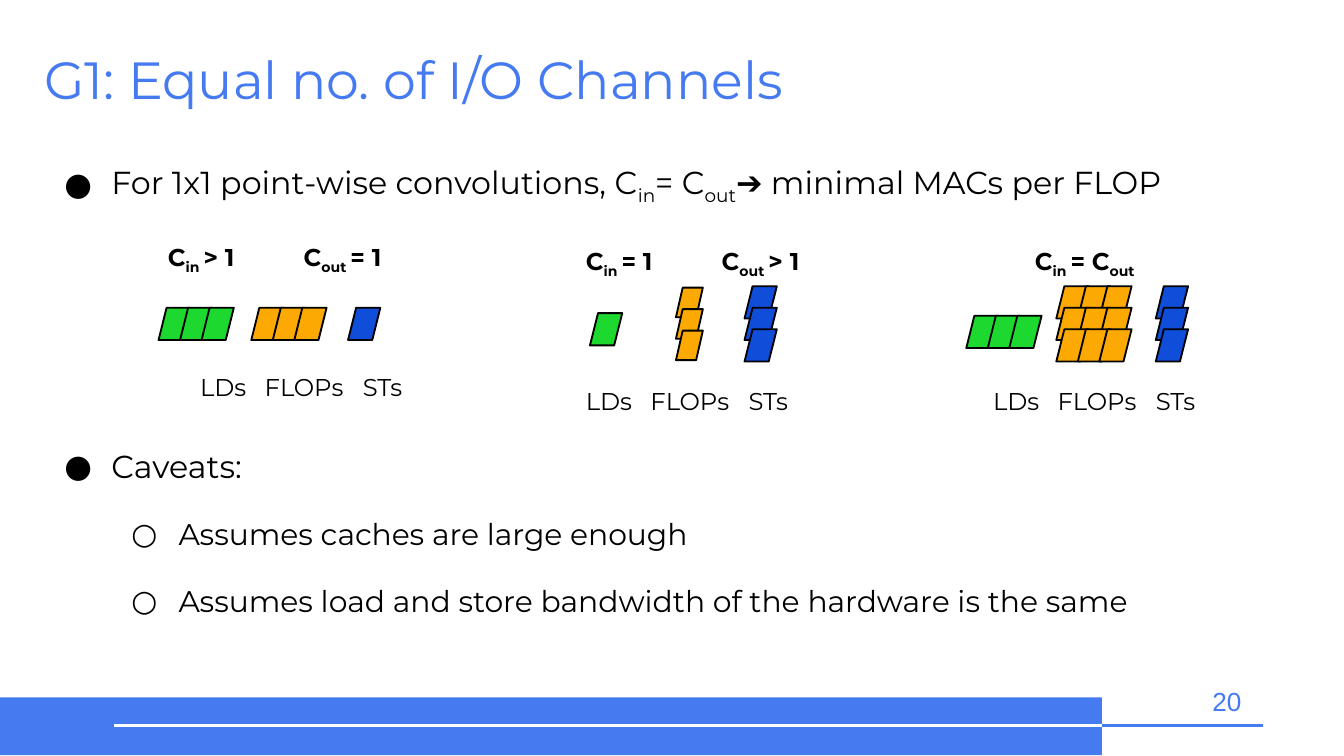
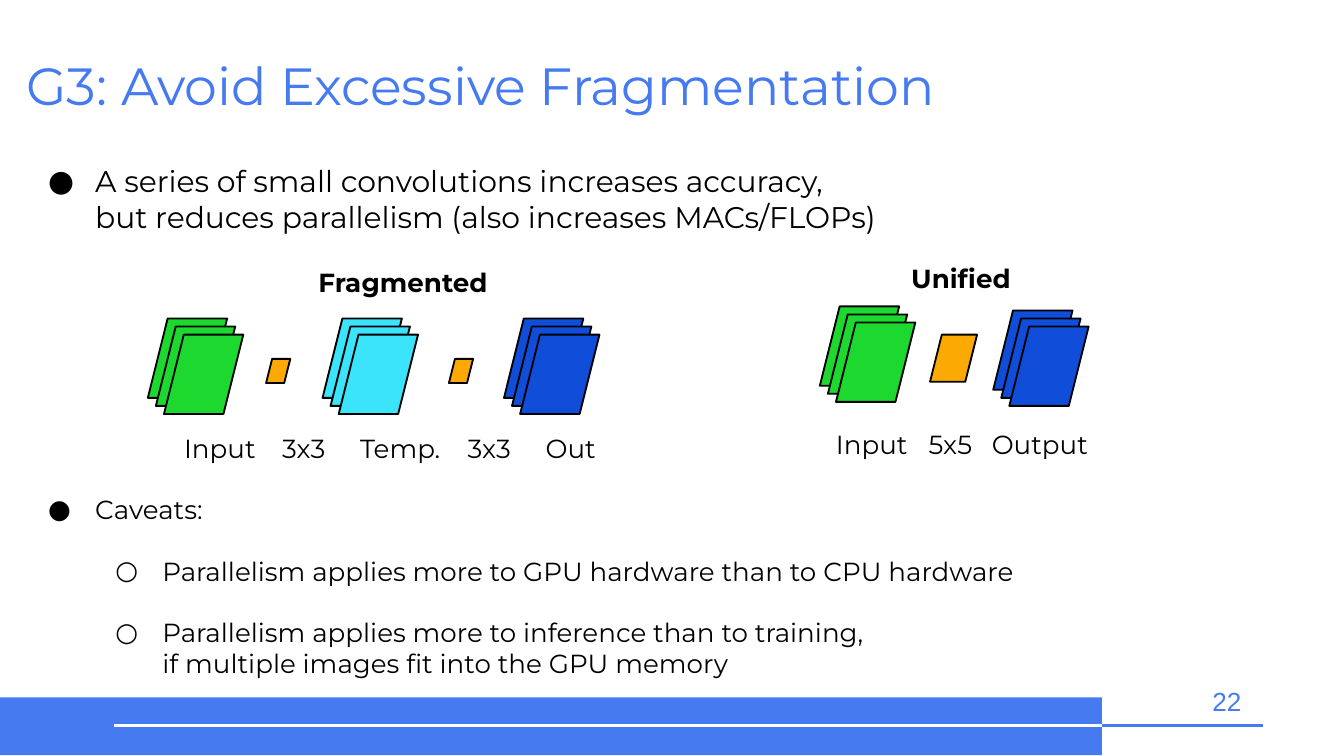
from itertools import product

from lxml import etree
from pptx import Presentation
from pptx.dml.color import RGBColor
from pptx.enum.shapes import MSO_CONNECTOR as CONN, MSO_SHAPE as SHAPE
from pptx.oxml.ns import qn
from pptx.util import Pt

PX = 9144  # 100 px to the inch
BLUE = RGBColor(0x46, 0x7A, 0xF1)
WHITE = RGBColor(0xFF, 0xFF, 0xFF)
BLACK = RGBColor(0x00, 0x00, 0x00)
GREEN = RGBColor(0x1D, 0xD9, 0x2F)
ORANGE = RGBColor(0xFC, 0xA9, 0x04)
NAVY = RGBColor(0x10, 0x4D, 0xD9)
CYAN = RGBColor(0x3B, 0xE4, 0xFB)


def add_text(s, text, box=None, tf=None, size=14, color=BLACK, font="Montserrat",
             bold=False, inset=0, level=None, before=0, spacing=1.0):
    """Add a paragraph in a new box, or to tf; |...| marks subscripts."""
    if tf is None:
        tf = s.shapes.add_textbox(*(v * PX for v in box)).text_frame
        tf.word_wrap = True
        tf.margin_left = tf.margin_right = tf.margin_top = tf.margin_bottom = inset * PX
        p = tf.paragraphs[0]
    else:
        p = tf.add_paragraph()
    p.space_before = Pt(before)
    p.line_spacing = spacing
    if level is not None:
        p.level = level
        pPr = p._p.get_or_add_pPr()
        pPr.set("marL", str((50 + 50 * level) * PX))
        pPr.set("indent", str(-35 * PX))
        clr = etree.SubElement(pPr, qn("a:buClr"))
        etree.SubElement(clr, qn("a:srgbClr")).set("val", str(BLACK))
        etree.SubElement(pPr, qn("a:buFont")).set("typeface", font)
        etree.SubElement(pPr, qn("a:buChar")).set("char", "●○"[level])
    for n, line in enumerate(text.split("\n")):
        if n:
            p.add_line_break()
        for i, part in enumerate(line.split("|")):
            if not part:
                continue
            r = p.add_run()
            r.text = part
            r.font.size, r.font.name, r.font.bold = Pt(size), font, bold
            r.font.color.rgb = color
            if i % 2:
                r.font._element.set("baseline", "-25000")
    return tf


def add_block(s, kind, color, x, y, w, h, outline=True):
    sp = s.shapes.add_shape(kind, x * PX, y * PX, w * PX, h * PX)
    sp.shadow.inherit = False
    sp.fill.solid()
    sp.fill.fore_color.rgb = color
    if outline:
        sp.line.color.rgb = BLACK
        sp.line.width = Pt(1)
    else:
        sp.line.fill.background()


prs = Presentation()
prs.slide_width = 1000 * PX
prs.slide_height = prs.slide_width * 9 // 16

# Shared frame: footer band, rules, page number, title
slides = []
for title, x, y, number in [
    ("G1: Equal no. of I/O Channels", 23, 25, "20"),
    ("G3: Avoid Excessive Fragmentation", 10, 30, "22"),
]:
    s = prs.slides.add_slide(prs.slide_layouts[6])
    add_block(s, SHAPE.RECTANGLE, BLUE, 0, 519, 820, 43, outline=False)
    for color, x1, x2 in [(WHITE, 826, 85), (BLUE, 940, 820)]:
        ln = s.shapes.add_connector(CONN.STRAIGHT, x1 * PX, 540 * PX, x2 * PX, 540 * PX)
        ln.line.color.rgb = color
        ln.line.width = Pt(1.5)
        etree.SubElement(ln._element.spPr, qn("a:effectLst"))
    add_text(s, number, (902, 510, 32, 24), color=BLUE, font="Arial")
    add_text(s, title, (x, y, 932, 63), size=28, color=BLUE, inset=10)
    slides.append(s)
channels, fragments = slides

# Slide 1: bullets
tf = add_text(channels, "For 1x1 point-wise convolutions, C|in|= C|out|➔ minimal MACs per FLOP",
              (23, 110, 898, 376), size=17, inset=10, level=0, spacing=1.04)
add_text(channels, "Caveats:", tf=tf, size=17, level=0, before=128, spacing=1.04)
for text in ("Assumes caches are large enough",
             "Assumes load and store bandwidth of the hardware is the same"):
    add_text(channels, text, tf=tf, size=16, level=1, before=16, spacing=1.04)

# Slide 1: grids of tiles (colour, x, y, columns, rows, tile width, tile height)
for color, x, y, cols, rows, w, h in [
    (GREEN, 118, 229, 3, 1, 24, 24),
    (ORANGE, 187, 229, 3, 1, 24, 24),
    (NAVY, 259, 229, 1, 1, 24, 24),
    (GREEN, 439, 233, 1, 1, 24, 24),
    (ORANGE, 503, 214, 1, 3, 20, 22),
    (NAVY, 554, 213, 1, 3, 24, 24),
    (GREEN, 719, 235, 3, 1, 24, 24),
    (ORANGE, 786, 213, 3, 3, 24, 24),
    (NAVY, 860, 213, 1, 3, 24, 24),
]:
    for row, col in product(range(rows), range(cols)):
        add_block(channels, SHAPE.PARALLELOGRAM, color, x + 16 * col, y + 16 * row, w, h)

# Slide 1: conditions above and captions below each group
for text, x, y in [
    ("C|in |> 1", 125, 180), ("C|out |= 1", 226, 180),
    ("C|in |= 1", 436, 183), ("C|out |> 1", 537, 183),
    ("C|in |= C|out|", 770, 183),
]:
    add_text(channels, text, (x, y, 90, 22), size=13, bold=True)
for x, y in [(149, 277), (436, 287), (739, 287)]:
    for text, dx in [("LDs", 0), ("FLOPs", 48), ("STs", 121)]:
        add_text(channels, text, (x + dx, y, 70, 22), size=13)

# Slide 2: bullets
tf = add_text(fragments, "A series of small convolutions increases accuracy,\n"
              "but reduces parallelism (also increases MACs/FLOPs)",
              (11, 111, 892, 413), size=16, inset=10, level=0)
add_text(fragments, "Caveats:", tf=tf, level=0, before=139)
for text in ("Parallelism applies more to GPU hardware than to CPU hardware",
             "Parallelism applies more to inference than to training,\n"
             "if multiple images fit into the GPU memory"):
    add_text(fragments, text, tf=tf, level=1, before=16)

# Slide 2: feature map stacks and kernels
for color, x, y in [(GREEN, 110, 237), (CYAN, 240, 237), (NAVY, 375, 237),
                    (GREEN, 610, 228), (NAVY, 739, 231)]:
    for step in range(0, 18, 6):
        add_block(fragments, SHAPE.PARALLELOGRAM, color, x + step, y + step, 59, 59)
for x, y, size in [(198, 267, 18), (334, 267, 18), (692, 249, 35)]:
    add_block(fragments, SHAPE.PARALLELOGRAM, ORANGE, x, y, size, size)

# Slide 2: headings and captions
for heading, hx, hy, y, captions in [
    ("Fragmented", 237, 198, 322,
     [("Input", 137), ("3x3", 210), ("Temp.", 268), ("3x3", 348), ("Out", 406)]),
    ("Unified", 678, 195, 319, [("Input", 622), ("5x5", 691), ("Output", 738)]),
]:
    add_text(fragments, heading, (hx, hy, 140, 24), bold=True)
    for text, x in captions:
        add_text(fragments, text, (x, y, 80, 24))

prs.save("out.pptx")
